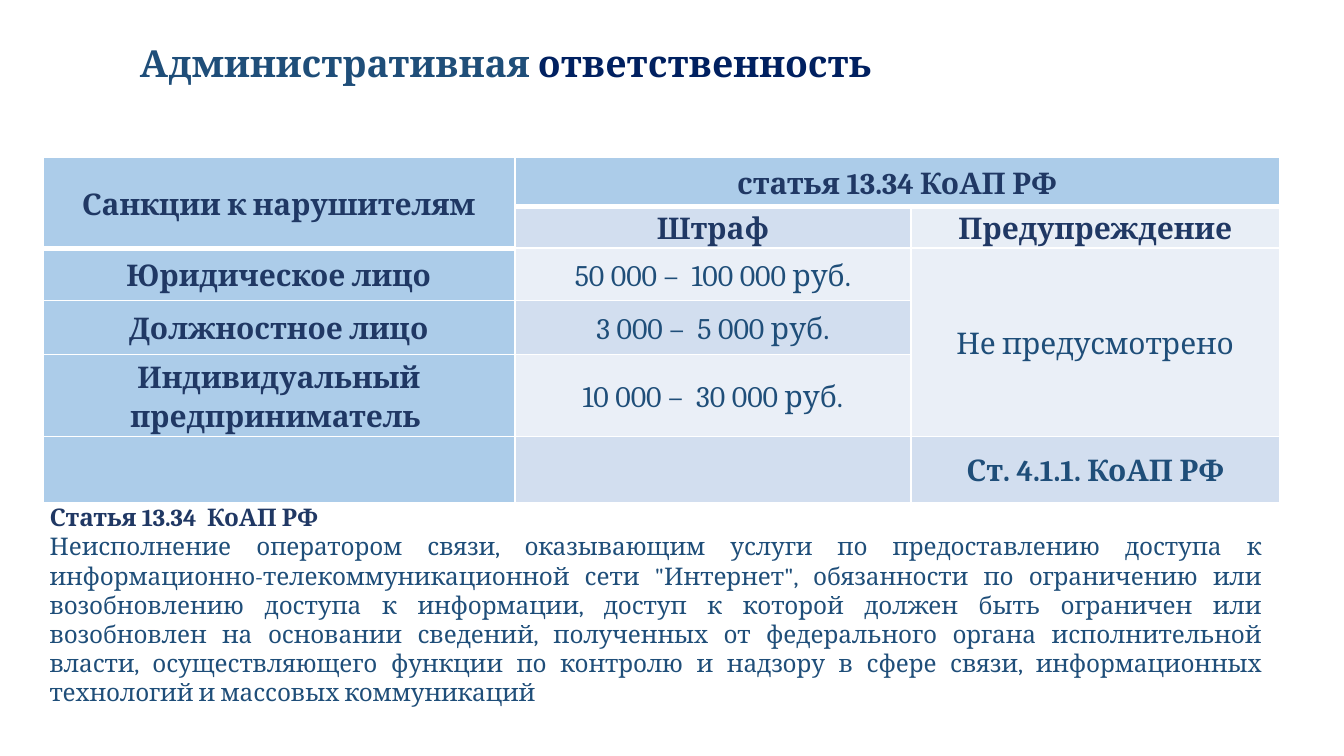
from lxml import etree
from pptx import Presentation, util as u
from pptx.dml.color import RGBColor
from pptx.enum import text as t
from pptx.oxml.ns import qn

FONT = "Cambria"
NAVY, BLUE, DEEP = "203864", "1F4E79", "002060"
HEAD, BAND, PALE = ("5B9BD5", 50), ("D2DEEF", 100), ("EAEFF7", 100)
SOFT = ("D2DEEF", 50)

# Content
TITLE = [("Административная", BLUE), (" ответственность", DEEP)]
NOTE = [
    ("Статья 13.34  КоАП РФ", NAVY, True, t.PP_ALIGN.LEFT),
    ("Неисполнение оператором связи, оказывающим услуги по предоставлению "
     "доступа к информационно-телекоммуникационной сети \"Интернет\", "
     "обязанности по ограничению или возобновлению доступа к информации, "
     "доступ к которой должен быть ограничен или возобновлен на основании "
     "сведений, полученных от федерального органа исполнительной власти, "
     "осуществляющего функции по контролю и надзору в сфере связи, "
     "информационных технологий и массовых коммуникаций",
     BLUE, False, t.PP_ALIGN.JUSTIFY),
]
ROWS = [
    ["Санкции к нарушителям", "статья 13.34 КоАП РФ", ""],
    ["", "Штраф", "Предупреждение"],
    ["Юридическое лицо", "50 000 –  100 000 руб.", "Не предусмотрено"],
    ["Должностное лицо", "3 000 –  5 000 руб.", ""],
    ["Индивидуальный предприниматель ", "10 000 –  30 000 руб.", ""],
    ["", "", "Ст. 4.1.1. КоАП РФ"],
]
WIDTHS = [3.51, 2.95, 2.74]
HEIGHTS = [0.37, 0.27, 0.39, 0.4, 0.49, 0.49]
MERGES = [((0, 0), (1, 0)), ((0, 1), (0, 2)), ((2, 2), (4, 2))]
THICK = {(0, 0), (1, 0), (0, 1), (0, 2)}  # cells above a heavy rule


def rgb(code):
    return RGBColor.from_string(code)


def style(font, size, color, bold):
    for key, val in dict(name=FONT, size=u.Pt(size), bold=bold).items():
        setattr(font, key, val)
    font.color.rgb = rgb(color)


def place(shape, *box):
    for key, val in zip(("left", "top", "width", "height"), box):
        setattr(shape, key, u.Inches(val))


def tint(cell, color, alpha):
    cell.fill.solid()
    cell.fill.fore_color.rgb = rgb(color)
    if alpha < 100:
        clr = cell._tc.tcPr.find(".//" + qn("a:srgbClr"))
        etree.SubElement(clr, qn("a:alpha")).set("val", str(alpha * 1000))


def rule(cell, widths):
    """Draw white borders, ahead of the fill in the cell properties."""
    for i, (side, pts) in enumerate(widths.items()):
        line = etree.Element(qn("a:ln" + side), w=str(u.Pt(pts)))
        fill = etree.SubElement(line, qn("a:solidFill"))
        etree.SubElement(fill, qn("a:srgbClr"), val="FFFFFF")
        cell._tc.tcPr.insert(i, line)


def shade(r, c):
    if c == 0 or r == 0:
        return HEAD
    if (r, c) == (1, 2):
        return SOFT
    return BAND if r % 2 else PALE


def ink(r, c):
    """Heads are bold navy, values plain blue, the last row bold blue."""
    head = c == 0 or r < 2
    return (NAVY if head else BLUE), head or r == len(ROWS) - 1


def add_title(slide):
    title = slide.shapes.title
    place(title, 0.94, 0.25, 6.55, 0.44)
    frame = title.text_frame
    for key, val in dict(word_wrap=True, vertical_anchor=t.MSO_ANCHOR.TOP,
                         auto_size=t.MSO_AUTO_SIZE.SHAPE_TO_FIT_TEXT).items():
        setattr(frame, key, val)
    para = frame.paragraphs[0]
    para.alignment = t.PP_ALIGN.LEFT
    for words, color in TITLE:
        run = para.add_run()
        run.text = words
        style(run.font, 20, color, True)


def add_grid(slide):
    box = slide.shapes.add_table(len(ROWS), len(WIDTHS), 0, 0, 0, 0)
    grid = box.table
    grid.first_row = grid.horz_banding = False
    for col, size in zip(grid.columns, WIDTHS):
        col.width = u.Inches(size)
    for row, size in zip(grid.rows, HEIGHTS):
        row.height = u.Inches(size)
    place(box, 0.32, 1.17, sum(WIDTHS), 2.57)
    for start, end in MERGES:
        grid.cell(*start).merge(grid.cell(*end))
    form = dict(vertical_anchor=t.MSO_ANCHOR.MIDDLE, margin_top=0,
                margin_bottom=0, margin_left=u.Inches(0.07),
                margin_right=u.Inches(0.07))
    for r, row in enumerate(ROWS):
        for c, words in enumerate(row):
            cell = grid.cell(r, c)
            tint(cell, *shade(r, c))
            rule(cell, {"L": 1, "R": 1,
                        "T": 3 if (r - 1, c) in THICK - {(0, 0)} else 1,
                        "B": 3 if (r, c) in THICK else 1})
            if not words:
                continue
            for key, val in form.items():
                setattr(cell, key, val)
            para = cell.text_frame.paragraphs[0]
            para.alignment, para.line_spacing = t.PP_ALIGN.CENTER, 1.15
            run = para.add_run()
            run.text = words
            style(run.font, 16, *ink(r, c))


def add_note(slide):
    box = slide.shapes.add_textbox(0, 0, 0, 0)
    place(box, 0.27, 3.69, 9.21, 1.41)
    frame = box.text_frame
    frame.word_wrap = True
    frame.auto_size = t.MSO_AUTO_SIZE.SHAPE_TO_FIT_TEXT
    for i, (words, color, bold, align) in enumerate(NOTE):
        para = frame.add_paragraph() if i else frame.paragraphs[0]
        para.alignment = align
        run = para.add_run()
        run.text = words
        style(run.font, 13, color, bold)


def main():
    deck = Presentation()
    deck.slide_width = u.Inches(10)
    deck.slide_height = deck.slide_width * 9 // 16
    slide = deck.slides.add_slide(deck.slide_layouts[5])
    add_title(slide)
    add_grid(slide)
    add_note(slide)
    deck.save("out.pptx")


if __name__ == "__main__":
    main()
